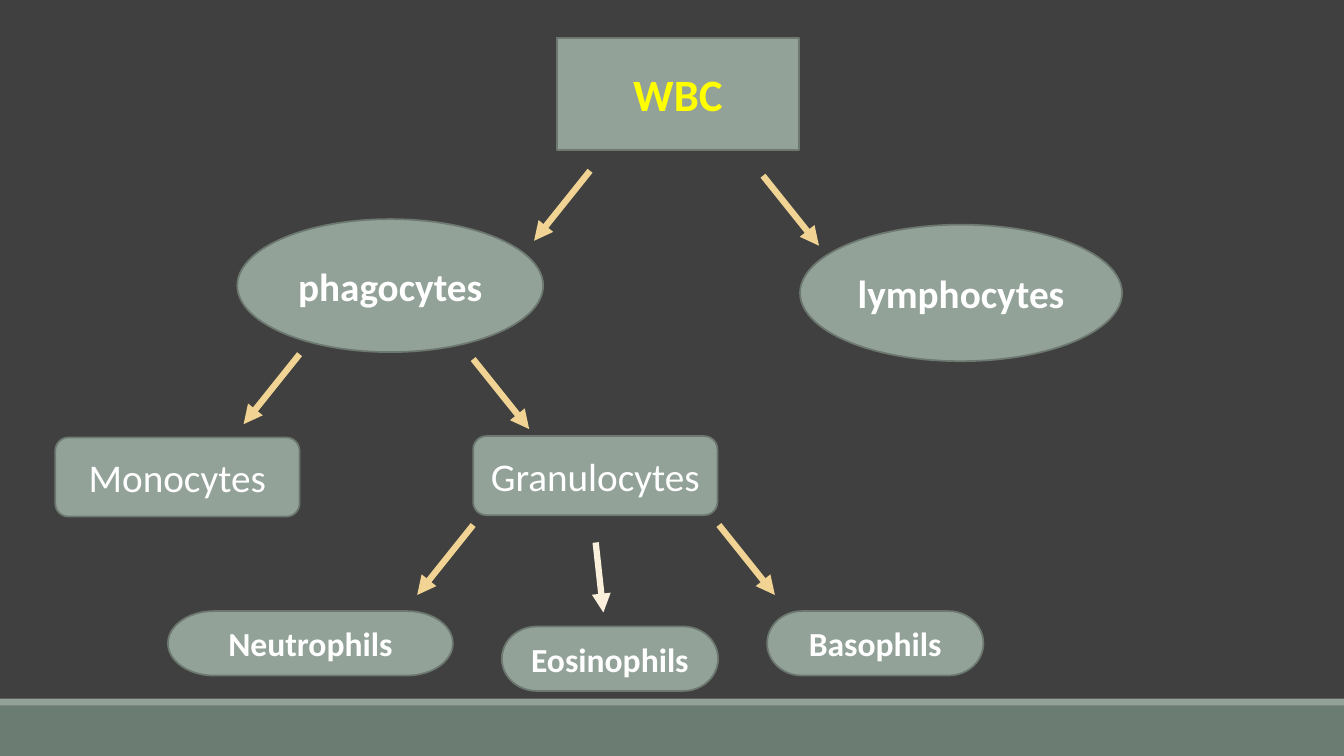
from dataclasses import dataclass

from lxml import etree
from pptx import Presentation
from pptx.dml.color import RGBColor
from pptx.enum import shapes, text
from pptx.oxml.ns import qn
from pptx.util import Pt

SHAPE = shapes.MSO_SHAPE


@dataclass(frozen=True)
class Theme:
    font: str = "Calibri"
    background: str = "404040"
    node: str = "93A299"
    outline: str = "6D7871"
    footer: str = "6B7D72"
    label: str = "FFFFFF"
    root_label: str = "FFFF00"
    arrow: str = "F1D394"
    pale_arrow: str = "FAF0DB"
    root_size: int = 32
    branch_size: int = 28
    leaf_size: int = 24


THEME = Theme()
WIDTH, HEIGHT = 960, 540

# Cells: label, shape, left, top, width, height, type size, bold, label colour
NODES = [
    ("WBC", SHAPE.RECTANGLE, 398, 27, 172.5, 80, THEME.root_size, True, THEME.root_label),
    ("phagocytes", SHAPE.OVAL, 169.5, 156.5, 218.5, 95, THEME.branch_size, True, THEME.label),
    ("lymphocytes", SHAPE.OVAL, 571.5, 160.5, 230, 97.5, THEME.branch_size, True, THEME.label),
    ("Monocytes", SHAPE.ROUNDED_RECTANGLE, 39.5, 312.5, 174.5, 56.5, THEME.branch_size, False, THEME.label),
    ("Granulocytes", SHAPE.ROUNDED_RECTANGLE, 338, 311.5, 174.5, 56.5, THEME.branch_size, False, THEME.label),
    ("Neutrophils", SHAPE.FLOWCHART_TERMINATOR, 120, 436.5, 203.5, 46, THEME.leaf_size, True, THEME.label),
    ("Eosinophils", SHAPE.FLOWCHART_TERMINATOR, 358.5, 447.5, 154.5, 46, THEME.leaf_size, True, THEME.label),
    ("Basophils", SHAPE.FLOWCHART_TERMINATOR, 548, 436.5, 154.5, 46, THEME.leaf_size, True, THEME.label),
]

# Arrows: start x, start y, horizontal run, colour
ARROW_DROP = 50
ARROWS = [
    (421.5, 122, -40, THEME.arrow),
    (545, 125.5, 40, THEME.arrow),
    (214, 253, -40, THEME.arrow),
    (338, 256.5, 40, THEME.arrow),
    (338, 375, -40, THEME.arrow),
    (425.5, 387.5, 5.5, THEME.pale_arrow),
    (513.5, 375, 40, THEME.arrow),
]


def rgb(color):
    return RGBColor.from_string(color)


def add_filled(slide, kind, left, top, width, height, fill):
    sp = slide.shapes.add_shape(kind, Pt(left), Pt(top), Pt(width), Pt(height))
    sp.shadow.inherit = False
    sp.fill.solid()
    sp.fill.fore_color.rgb = rgb(fill)
    sp.line.fill.background()
    return sp


def add_node(slide, label, kind, left, top, width, height, size, bold, color):
    sp = add_filled(slide, kind, left, top, width, height, THEME.node)
    sp.line.color.rgb = rgb(THEME.outline)
    sp.line.width = Pt(1.25)
    tf = sp.text_frame
    tf.word_wrap = True
    tf.vertical_anchor = text.MSO_ANCHOR.MIDDLE
    p = tf.paragraphs[0]
    p.text = label
    p.alignment = text.PP_ALIGN.CENTER
    p.font.name = THEME.font
    p.font.size = Pt(size)
    p.font.bold = bold
    p.font.color.rgb = rgb(color)


def add_arrow(slide, x, y, run, color):
    cxn = slide.shapes.add_connector(
        shapes.MSO_CONNECTOR.STRAIGHT, Pt(x), Pt(y), Pt(x + run), Pt(y + ARROW_DROP))
    cxn.line.color.rgb = rgb(color)
    cxn.line.width = Pt(4.5)
    etree.SubElement(cxn.line._get_or_add_ln(), qn("a:tailEnd"), type="triangle")
    etree.SubElement(cxn._element.spPr, qn("a:effectLst"))


def main():
    prs = Presentation()
    prs.slide_width, prs.slide_height = Pt(WIDTH), Pt(HEIGHT)
    slide = prs.slides.add_slide(prs.slide_layouts[6])
    slide.background.fill.solid()
    slide.background.fill.fore_color.rgb = rgb(THEME.background)

    # Footer bands
    add_filled(slide, SHAPE.RECTANGLE, 0, 504, WIDTH, 36, THEME.footer)
    add_filled(slide, SHAPE.RECTANGLE, 0, 499, WIDTH, 5, THEME.node)

    # Cell tree
    for node in NODES:
        add_node(slide, *node)
    for arrow in ARROWS:
        add_arrow(slide, *arrow)

    prs.save("out.pptx")


if __name__ == "__main__":
    main()
